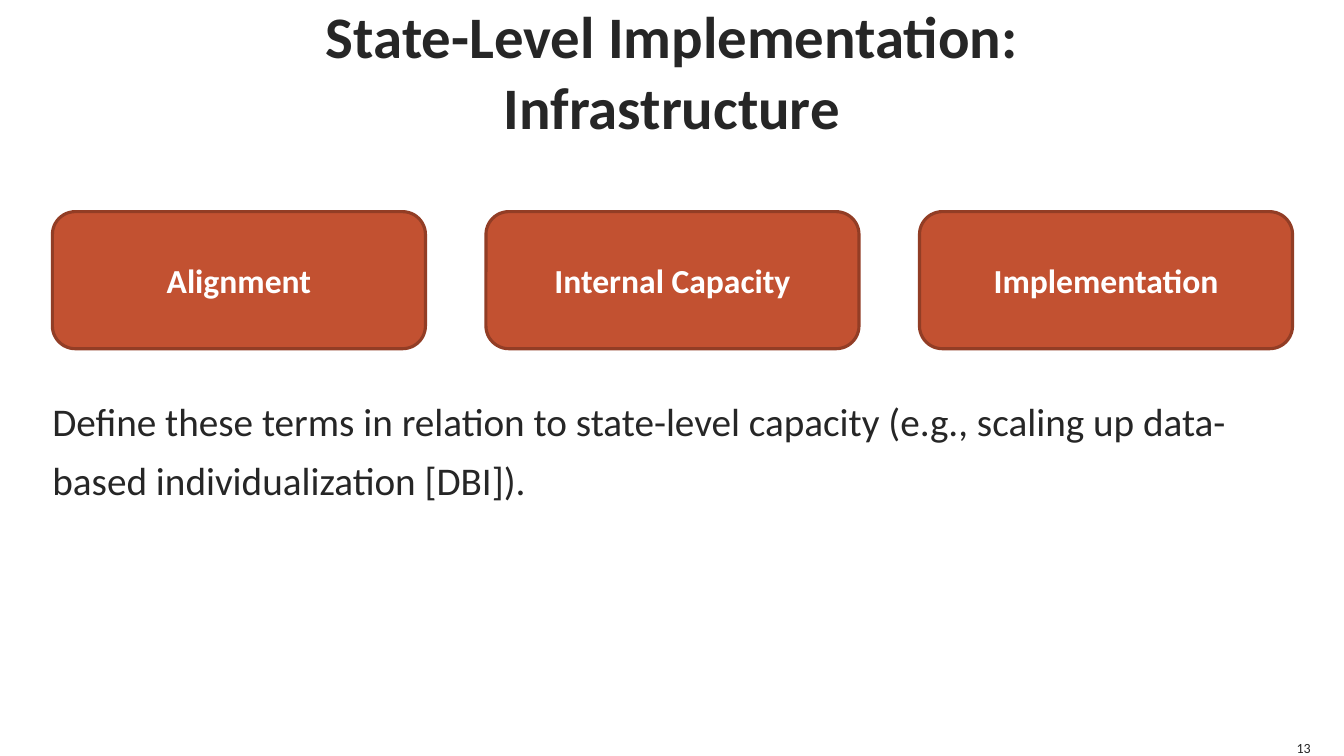
from pptx import Presentation
from pptx.dml.color import RGBColor
from pptx.enum.shapes import MSO_SHAPE
from pptx.enum.text import MSO_ANCHOR, PP_ALIGN
from pptx.util import Inches, Pt

ROUNDED = MSO_SHAPE.ROUNDED_RECTANGLE
TOP, MIDDLE, BOTTOM = MSO_ANCHOR.TOP, MSO_ANCHOR.MIDDLE, MSO_ANCHOR.BOTTOM
LEFT, CENTER, RIGHT = PP_ALIGN.LEFT, PP_ALIGN.CENTER, PP_ALIGN.RIGHT
INK = "262626"


def color(hex_code):
    return RGBColor.from_string(hex_code)


def write(shape, lines, size, ink, anchor, align, bold=False, margins=(0, 0)):
    frame = shape.text_frame
    frame.word_wrap = True
    frame.vertical_anchor = anchor
    frame.margin_left = frame.margin_right = Inches(margins[0])
    frame.margin_top = frame.margin_bottom = Inches(margins[1])
    paragraph = frame.paragraphs[0]
    paragraph.alignment = align
    for index, line in enumerate(lines):
        if index:
            paragraph.add_line_break()
        run = paragraph.add_run()
        run.text = line
        run.font.name = "Calibri"
        run.font.size = Pt(size)
        run.font.bold = bold
        run.font.color.rgb = color(ink)
    return paragraph


prs = Presentation()
prs.slide_width = Inches(13.33)
prs.slide_height = Inches(7.5)
slide = prs.slides.add_slide(prs.slide_layouts[6])

title = slide.shapes.add_textbox(Inches(0.5), Inches(0), Inches(12.33), Inches(1.4))
write(title, ["State-Level Implementation:", "Infrastructure"], 42, INK, MIDDLE, CENTER, bold=True)

for column, term in enumerate(["Alignment", "Internal Capacity", "Implementation"]):
    card = slide.shapes.add_shape(
        ROUNDED, Inches(0.52 + 4.3 * column), Inches(2.1), Inches(3.7), Inches(1.36))
    card.shadow.inherit = False
    card.fill.solid()
    card.fill.fore_color.rgb = color("C25131")
    card.line.color.rgb = color("923D25")
    card.line.width = Pt(2.25)
    write(card, [term], 24, "FFFFFF", MIDDLE, CENTER, bold=True, margins=(0.1, 0.05))

prompt = slide.shapes.add_textbox(Inches(0.52), Inches(3.83), Inches(12.33), Inches(2.24))
prompt_paragraph = write(
    prompt,
    ["Define these terms in relation to state-level capacity "
     "(e.g., scaling up data-based individualization [DBI])."],
    28, INK, TOP, LEFT)
prompt_paragraph.line_spacing = 1.25

page_number = slide.shapes.add_textbox(Inches(12.83), Inches(7.33), Inches(0.17), Inches(0.17))
write(page_number, ["13"], 10, INK, BOTTOM, RIGHT)

prs.save("out.pptx")
